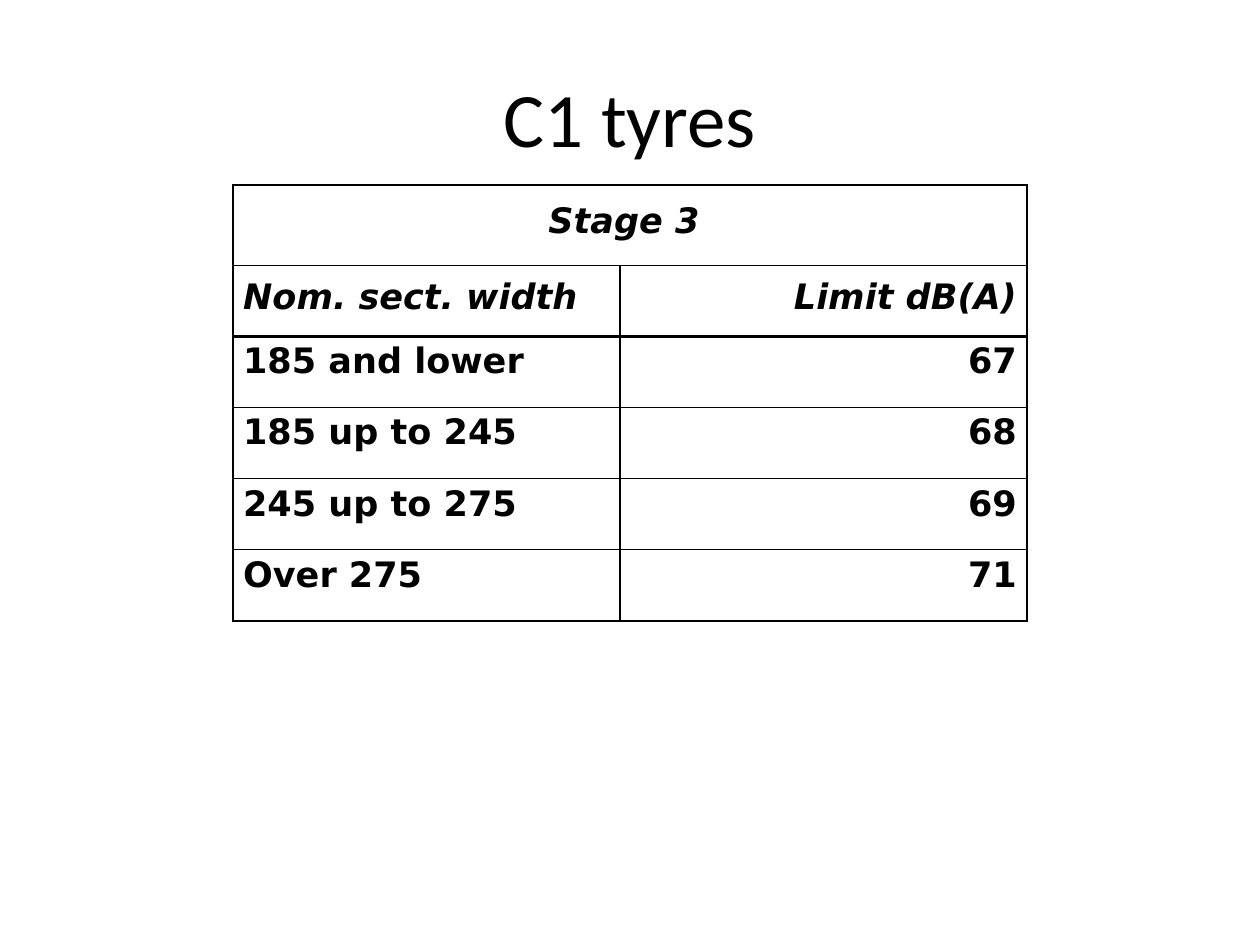
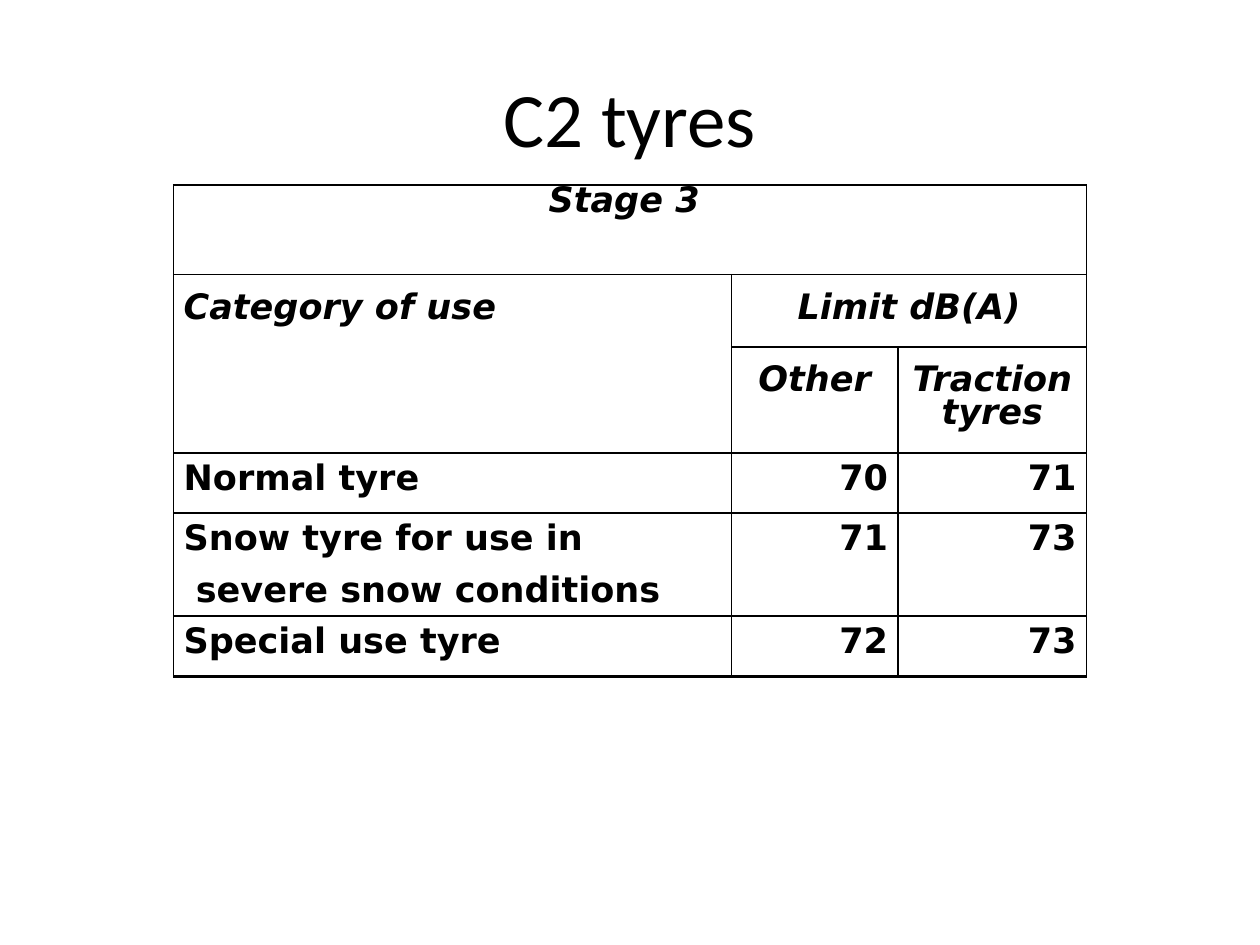
from dataclasses import dataclass

from lxml import etree
from pptx import Presentation, util as u
from pptx.dml.color import RGBColor
from pptx.enum import text
from pptx.oxml import ns


@dataclass(frozen=True)
class Theme:
    ink: str = "000000"
    title_font: str = "Calibri"
    table_font: str = "DejaVu Sans"
    title_size: float = 44
    table_size: float = 20
    thin: float = 1
    thick: float = 1.5


theme = Theme()
LEFT, CENTER, RIGHT = text.PP_ALIGN.LEFT, text.PP_ALIGN.CENTER, text.PP_ALIGN.RIGHT

# Lengths in points: cell margins, line height, gap between paragraphs
row_styles = {
    "banner": {"left": 0, "right": 6.8, "line": 10, "gap": 8, "italic": True},
    "heading": {"left": 5.75, "right": 5.75, "top": 19, "line": 11, "gap": 8, "italic": True},
    "body": {"left": 5.75, "right": 5.75, "top": 15, "line": 11, "gap": 19, "italic": False},
}

tyre_classes = [
    {
        "title": "C1 tyres",
        "left": 133.2,
        "columns": [221, 232.6],
        "rows": [46.2] + [40.6] * 5,
        "banner_top": 22.7,
        "last_heading": 1,
        "heading_align": RIGHT,
        "merges": [((0, 0), (0, 1))],
        "cells": [
            ["Stage 3", ""],
            ["Nom. sect. width", "Limit dB(A)"],
            ["185 and lower", "67"],
            ["185 up to 245", "68"],
            ["245 up to 275", "69"],
            ["Over 275", "71"],
        ],
    },
    {
        "title": "C2 tyres",
        "left": 99.2,
        "columns": [318.8, 95.2, 107.8],
        "rows": [51.4, 41.4, 60.4, 34.5, 58.9, 34.5],
        "banner_top": 10.5,
        "last_heading": 2,
        "heading_align": CENTER,
        "merges": [((0, 0), (0, 2)), ((1, 0), (2, 0)), ((1, 1), (1, 2))],
        "cells": [
            ["Stage 3", "", ""],
            ["Category of use", "Limit dB(A)", ""],
            ["", "Other", "Traction\ntyres"],
            ["Normal tyre", "70", "71"],
            ["Snow tyre for use in\n severe snow conditions", "71", "73"],
            ["Special use tyre", "72", "73"],
        ],
    },
]


def add_paragraphs(frame, content, align, font, line=None, gap=0):
    """Fill the frame with one paragraph per line of content."""
    frame.text = content
    for index, paragraph in enumerate(frame.paragraphs):
        paragraph.alignment = align
        if line:
            paragraph.line_spacing = u.Pt(line)
        if index:
            paragraph.space_before = u.Pt(gap)
        for run in paragraph.runs:
            run.font.color.rgb = RGBColor.from_string(theme.ink)
            for name, value in font.items():
                setattr(run.font, name, value)


def add_borders(cell, widths):
    properties = cell._tc.get_or_add_tcPr()
    for side, width in widths.items():
        border = etree.SubElement(properties, ns.qn(f"a:ln{side}"), w=str(u.Pt(width)))
        fill = etree.SubElement(border, ns.qn("a:solidFill"))
        etree.SubElement(fill, ns.qn("a:srgbClr"), val=theme.ink)


presentation = Presentation()
presentation.slide_width, presentation.slide_height = u.Pt(720), u.Pt(540)

for tyres in tyre_classes:
    slide = presentation.slides.add_slide(presentation.slide_layouts[6])

    title = slide.shapes.add_textbox(u.Pt(36), u.Pt(21.6), u.Pt(648), u.Pt(90))
    title.text_frame.word_wrap = True
    title.text_frame.vertical_anchor = text.MSO_ANCHOR.MIDDLE
    title_font = {"name": theme.title_font, "size": u.Pt(theme.title_size)}
    add_paragraphs(title.text_frame, tyres["title"], CENTER, title_font)

    columns, rows = tyres["columns"], tyres["rows"]
    table = slide.shapes.add_table(
        len(rows), len(columns), u.Pt(tyres["left"]), u.Pt(105.6),
        u.Pt(sum(columns)), u.Pt(sum(rows)),
    ).table
    table.first_row = table.horz_banding = False
    for column, width in zip(table.columns, columns):
        column.width = u.Pt(width)
    for row, height in zip(table.rows, rows):
        row.height = u.Pt(height)
    for first, last in tyres["merges"]:
        table.cell(*first).merge(table.cell(*last))

    last_heading = tyres["last_heading"]
    thick_rows = {last_heading, len(rows) - 1}
    for row_index, row_cells in enumerate(tyres["cells"]):
        if row_index == 0:
            kind, value_align = "banner", CENTER
        elif row_index <= last_heading:
            kind, value_align = "heading", tyres["heading_align"]
        else:
            kind, value_align = "body", RIGHT
        style = row_styles[kind]

        for column_index, content in enumerate(row_cells):
            cell = table.cell(row_index, column_index)
            bottom_row = row_index + (cell.span_height - 1 if cell.is_merge_origin else 0)
            add_borders(cell, {
                "L": theme.thin,
                "R": theme.thin,
                "T": theme.thick if row_index == last_heading + 1 else theme.thin,
                "B": theme.thick if bottom_row in thick_rows else theme.thin,
            })
            cell.fill.background()
            margins = {
                "margin_left": style["left"],
                "margin_right": style["right"],
                "margin_top": style.get("top", tyres["banner_top"]),
                "margin_bottom": 0,
            }
            for name, value in margins.items():
                setattr(cell, name, u.Pt(value))
            if cell.is_spanned:
                continue
            align = LEFT if column_index == 0 and kind != "banner" else value_align
            font = {
                "name": theme.table_font,
                "size": u.Pt(theme.table_size),
                "bold": True,
                "italic": style["italic"],
            }
            add_paragraphs(cell.text_frame, content, align, font, style["line"], style["gap"])

presentation.save("out.pptx")
